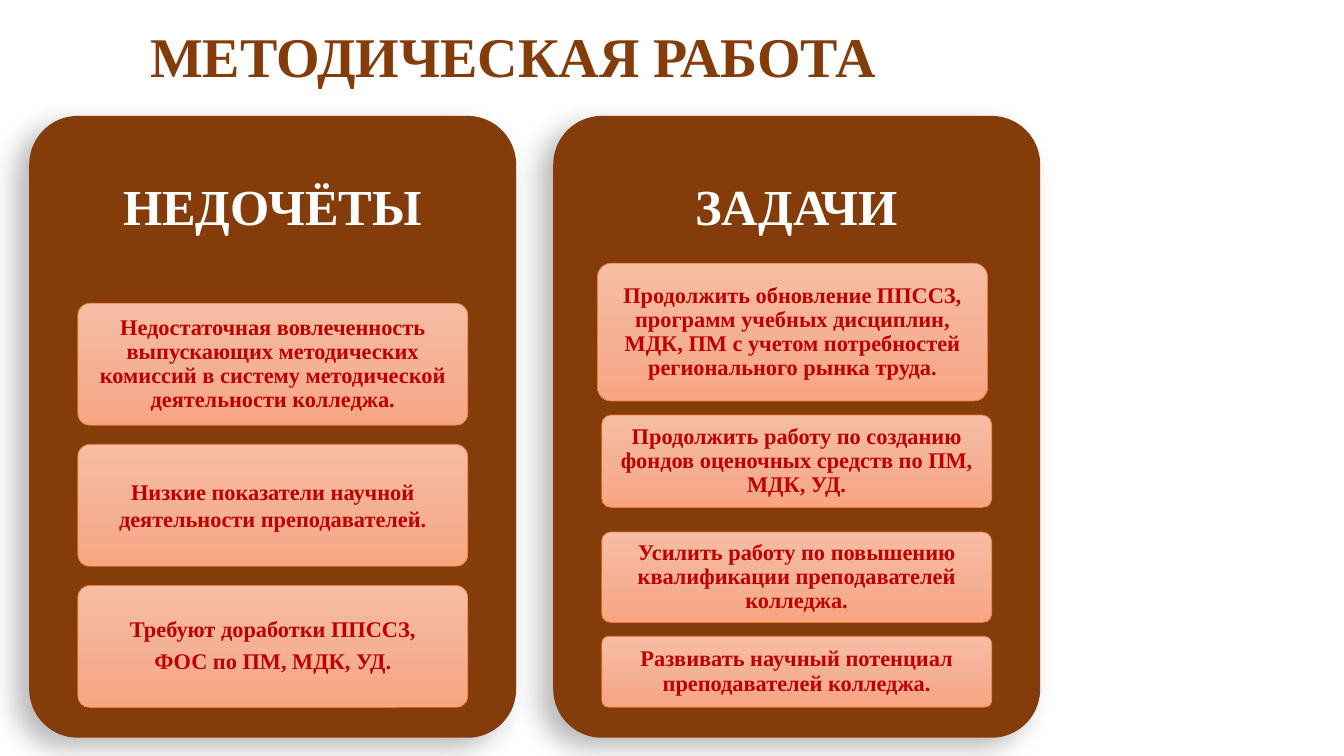
"""Build the slide on methodical work: shortcomings and tasks in two panels."""
from copy import deepcopy
from dataclasses import dataclass

from lxml import etree
from pptx import Presentation
from pptx import util as u
from pptx.dml.color import RGBColor
from pptx.enum import shapes, text
from pptx.oxml.ns import qn

FONT = "Times New Roman"
BROWN = RGBColor(0x84, 0x3C, 0x0B)
WHITE = RGBColor(0xFF, 0xFF, 0xFF)
RED = RGBColor(0xC0, 0x00, 0x00)
ORANGE = RGBColor(0xED, 0x7D, 0x31)
PEACH = ((0, RGBColor(0xF7, 0xBD, 0xA5)),
         (0.5, RGBColor(0xF5, 0xB1, 0x96)),
         (1, RGBColor(0xF8, 0xA5, 0x82)))
PANEL_TOP, PANEL_WIDTH, PANEL_HEIGHT = 82.8, 347.8, 444.2
HEADING_HEIGHT = 133.2
CARD_WIDTH = 278.6
SHORTCOMING_TOP, SHORTCOMING_HEIGHT, SHORTCOMING_STEP = 216.6, 87.1, 100.8


@dataclass
class Card:
    left: float
    top: float
    height: float
    wording: str
    line_spacing: float = 0.9


@dataclass
class Panel:
    left: float
    heading: str
    cards: list[Card]


def write(frame, wording: str, size: float, color: RGBColor,
          inset: tuple[float, float] = (7.2, 3.6),
          line_spacing: float = 0.9, after: float = 0) -> None:
    """Fill a text frame with centred bold text."""
    frame.word_wrap = True
    frame.auto_size = text.MSO_AUTO_SIZE.NONE
    frame.vertical_anchor = text.MSO_ANCHOR.MIDDLE
    frame.margin_left = frame.margin_right = u.Pt(inset[0])
    frame.margin_top = frame.margin_bottom = u.Pt(inset[1])
    frame.text = wording
    for paragraph in frame.paragraphs:
        paragraph.alignment = text.PP_ALIGN.CENTER
        paragraph.line_spacing = line_spacing
        paragraph.space_before = u.Pt(0)
        paragraph.space_after = u.Pt(after)
        for run in paragraph.runs:
            run.font.name = FONT
            run.font.size = u.Pt(size)
            run.font.bold = True
            run.font.color.rgb = color


def add_rounded(slide, left: float, top: float, width: float, height: float):
    """Add a rounded rectangle without a shadow."""
    rounded = slide.shapes.add_shape(
        shapes.MSO_SHAPE.ROUNDED_RECTANGLE,
        u.Pt(left), u.Pt(top), u.Pt(width), u.Pt(height))
    rounded.adjustments[0] = 0.1
    rounded.shadow.inherit = False
    return rounded


def cast_shadow(shape) -> None:
    """Give a shape a soft shadow down to the left."""
    effects = shape._element.spPr.find(qn("a:effectLst"))
    shadow = etree.SubElement(
        effects, qn("a:outerShdw"), blurRad=str(u.Pt(19.7)),
        dist=str(u.Pt(11.8)), dir=str(141 * 60000), algn="tl", rotWithShape="0")
    black = etree.SubElement(shadow, qn("a:srgbClr"), val="000000")
    etree.SubElement(black, qn("a:alpha"), val="28000")


def fill_peach(shape) -> None:
    """Fill a shape with the vertical peach gradient."""
    shape.fill.gradient()
    shape.fill.gradient_angle = 270
    stops = shape._element.spPr.find(qn("a:gradFill")).find(qn("a:gsLst"))
    stops.insert(1, deepcopy(stops[0]))
    for stop, (position, color) in zip(shape.fill.gradient_stops, PEACH):
        stop.position = position
        stop.color.rgb = color


def draw_card(slide, card: Card) -> None:
    """Draw one peach card with its text."""
    plate = add_rounded(slide, card.left, card.top, CARD_WIDTH, card.height)
    fill_peach(plate)
    plate.line.color.rgb = ORANGE
    plate.line.width = u.Pt(0.5)
    write(plate.text_frame, card.wording, 16, RED, (2.9, 2.2),
          card.line_spacing, after=5.6)


def draw_panel(slide, panel: Panel) -> None:
    """Draw a brown panel with its heading and cards."""
    backing = add_rounded(slide, panel.left, PANEL_TOP, PANEL_WIDTH, PANEL_HEIGHT)
    backing.fill.solid()
    backing.fill.fore_color.rgb = BROWN
    backing.line.fill.background()
    cast_shadow(backing)
    heading = slide.shapes.add_textbox(
        u.Pt(panel.left), u.Pt(PANEL_TOP), u.Pt(PANEL_WIDTH), u.Pt(HEADING_HEIGHT))
    write(heading.text_frame, panel.heading, 36, WHITE, (10.8, 10.8), after=12.6)
    for card in panel.cards:
        draw_card(slide, card)


SHORTCOMINGS = (
    ("Недостаточная вовлеченность выпускающих методических комиссий "
     "в систему методической деятельности колледжа.", 0.9),
    ("Низкие показатели научной деятельности преподавателей.", 1.0),
    ("Требуют доработки ППССЗ,\nФОС по ПМ, МДК, УД.", 0.9),
)
PANELS = (
    Panel(20.9, "НЕДОЧЁТЫ", [
        Card(55.6, SHORTCOMING_TOP + row * SHORTCOMING_STEP,
             SHORTCOMING_HEIGHT, wording, spacing)
        for row, (wording, spacing) in enumerate(SHORTCOMINGS)]),
    Panel(395.2, "ЗАДАЧИ", [
        Card(426.8, 188, 98.4, "Продолжить обновление ППССЗ, программ учебных "
             "дисциплин, МДК, ПМ с учетом потребностей регионального рынка труда."),
        Card(429.8, 296.5, 66, "Продолжить работу по созданию фондов "
             "оценочных средств по ПМ, МДК, УД."),
        Card(429.8, 380, 64.6, "Усилить работу по повышению квалификации "
             "преподавателей колледжа."),
        Card(429.8, 454.5, 50.6, "Развивать научный потенциал "
             "преподавателей колледжа."),
    ]),
)


def main() -> None:
    """Build and save the presentation."""
    deck = Presentation()
    deck.slide_width, deck.slide_height = u.Pt(960), u.Pt(540)
    slide = deck.slides.add_slide(deck.slide_layouts[5])
    title = slide.shapes.title
    title.left, title.top = u.Pt(-47.5), u.Pt(-10)
    title.width, title.height = u.Pt(828), u.Pt(104.4)
    write(title.text_frame, "МЕТОДИЧЕСКАЯ РАБОТА", 40, BROWN)
    for panel in PANELS:
        draw_panel(slide, panel)
    deck.save("out.pptx")


if __name__ == "__main__":
    main()
